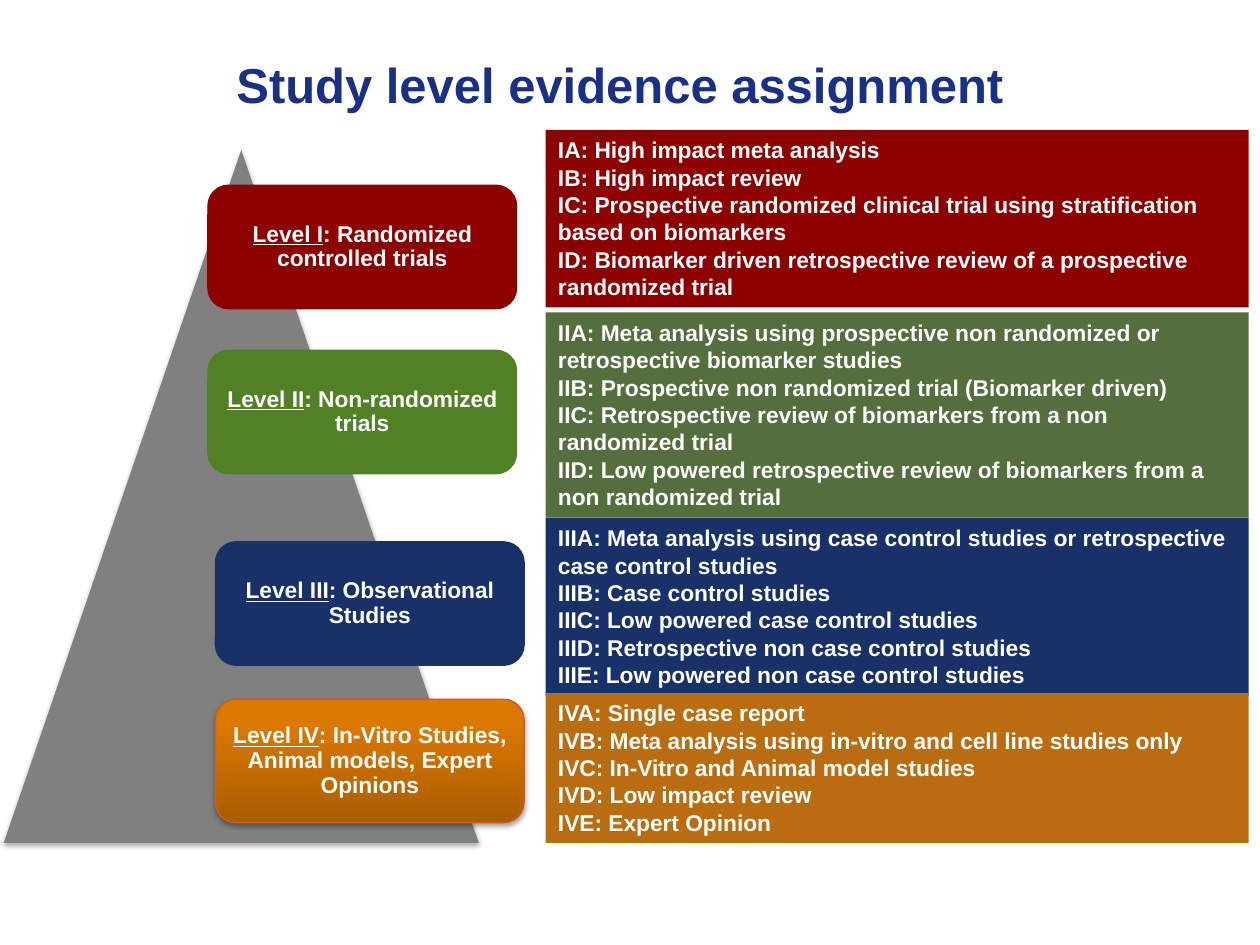
from lxml import etree
from pptx import Presentation
from pptx.dml.color import RGBColor
from pptx.enum import shapes, text
from pptx.oxml import ns
from pptx.util import Inches, Pt

NAVY = RGBColor(0x19, 0x30, 0x87)
WHITE = RGBColor(0xFF, 0xFF, 0xFF)
GREY = RGBColor(0x80, 0x80, 0x80)
RED = RGBColor(0x8C, 0x00, 0x00)
GREEN = RGBColor(0x52, 0x80, 0x26)
OLIVE = RGBColor(0x54, 0x6E, 0x3D)
BLUE = RGBColor(0x18, 0x31, 0x68)
OCHRE = RGBColor(0xBA, 0x6D, 0x10)
BROWN = RGBColor(0xA9, 0x5D, 0x00)
ORANGE = RGBColor(0xDB, 0x78, 0x00)
RUST = RGBColor(0xD0, 0x5D, 0x19)

TITLE = "Study level evidence assignment"

# name, description, left, top, fill (a list is a gradient from the bottom up), line
LEVELS = [
    ("Level I", ": Randomized controlled trials", 1.65, 1.47, RED, RED),
    ("Level II", ": Non-randomized trials", 1.65, 2.78, GREEN, GREEN),
    ("Level III", ": Observational Studies", 1.71, 4.3, BLUE, BLUE),
    ("Level IV", ": In-Vitro Studies, Animal models, Expert Opinions",
     1.71, 5.55, [BROWN, ORANGE], RUST),
]
LEVEL_SIZE = (2.45, 0.98)

# top, height, fill, lines
PANELS = [
    (1.03, 1.41, RED, [
        "IA: High impact meta analysis",
        "IB: High impact review",
        "IC: Prospective randomized clinical trial using stratification based on biomarkers",
        "ID: Biomarker driven retrospective review of a prospective randomized trial",
    ]),
    (2.48, 1.63, OLIVE, [
        "IIA: Meta analysis using prospective non randomized or retrospective biomarker studies",
        "IIB: Prospective non randomized trial (Biomarker driven)",
        "IIC: Retrospective review of biomarkers from a non randomized trial",
        "IID: Low powered retrospective review of biomarkers from a non randomized trial",
    ]),
    (4.11, 1.41, BLUE, [
        "IIIA: Meta analysis using case control studies or retrospective case control studies",
        "IIIB: Case control studies",
        "IIIC: Low powered case control studies",
        "IIID: Retrospective non case control studies",
        "IIIE: Low powered non case control studies",
    ]),
    (5.5, 1.19, OCHRE, [
        "IVA: Single case report",
        "IVB: Meta analysis using in-vitro and cell line studies only",
        "IVC: In-Vitro and Animal model studies",
        "IVD: Low impact review",
        "IVE: Expert Opinion",
    ]),
]
PANEL_LEFT, PANEL_WIDTH = 4.33, 5.58


def add_run(p, content, size=13, color=WHITE, underline=None):
    r = p.add_run()
    r.text = content
    f = r.font
    f.name, f.size, f.bold, f.underline = "Arial", Pt(size), True, underline
    f.color.rgb = color


def add_box(s, kind, left, top, width, height, fill, line=None):
    sp = s.shapes.add_shape(kind, *map(Inches, (left, top, width, height)))
    sp.shadow.inherit = False
    if isinstance(fill, list):
        sp.fill.gradient()
        sp.fill.gradient_angle = 90
        for stop, color, position in zip(sp.fill.gradient_stops, fill, (0, 0.8)):
            stop.color.rgb, stop.position = color, position
    else:
        sp.fill.solid()
        sp.fill.fore_color.rgb = fill
    if line is None:
        sp.line.fill.background()
    else:
        sp.line.color.rgb = line
        sp.line.width = Pt(0.75)
    sp.text_frame.word_wrap = True
    return sp


def add_shadow(sp):
    effects = sp._element.spPr.find(ns.qn("a:effectLst"))
    shadow = etree.SubElement(effects, ns.qn("a:outerShdw"), blurRad=str(Pt(3.1)),
                              dist=str(Pt(1.8)), dir="5400000", rotWithShape="0")
    color = etree.SubElement(shadow, ns.qn("a:srgbClr"), val="000000")
    etree.SubElement(color, ns.qn("a:alpha"), val="35000")


def add_level(s, name, description, left, top, fill, line):
    sp = add_box(s, shapes.MSO_SHAPE.ROUNDED_RECTANGLE, left, top, *LEVEL_SIZE, fill, line)
    if isinstance(fill, list):
        add_shadow(sp)
    tf = sp.text_frame
    tf.vertical_anchor = text.MSO_ANCHOR.MIDDLE
    tf.margin_left = tf.margin_right = tf.margin_top = tf.margin_bottom = Inches(0.05)
    p = tf.paragraphs[0]
    p.alignment = text.PP_ALIGN.CENTER
    p.line_spacing = 0.9
    add_run(p, name, underline=True)
    add_run(p, description)


def add_panel(s, top, height, fill, lines):
    sp = add_box(s, shapes.MSO_SHAPE.RECTANGLE, PANEL_LEFT, top, PANEL_WIDTH, height, fill)
    tf = sp.text_frame
    tf.auto_size = text.MSO_AUTO_SIZE.SHAPE_TO_FIT_TEXT
    tf.vertical_anchor = text.MSO_ANCHOR.TOP
    for i, content in enumerate(lines):
        p = tf.add_paragraph() if i else tf.paragraphs[0]
        p.alignment = text.PP_ALIGN.LEFT
        add_run(p, content)


def main():
    prs = Presentation()
    prs.slide_width, prs.slide_height = Inches(10), Inches(7.5)
    s = prs.slides.add_slide(prs.slide_layouts[5])

    title = s.shapes.title
    title.left, title.top, title.width, title.height = map(Inches, (0.17, 0.25, 9.5, 0.83))
    title.text_frame.vertical_anchor = text.MSO_ANCHOR.MIDDLE
    p = title.text_frame.paragraphs[0]
    p.alignment = text.PP_ALIGN.CENTER
    add_run(p, TITLE, size=28, color=NAVY)

    pyramid = add_box(s, shapes.MSO_SHAPE.ISOSCELES_TRIANGLE, 0.03, 1.19, 3.77, 5.5, GREY)
    add_shadow(pyramid)
    for level in LEVELS:
        add_level(s, *level)
    for panel in PANELS:
        add_panel(s, *panel)

    prs.save("out.pptx")


if __name__ == "__main__":
    main()
